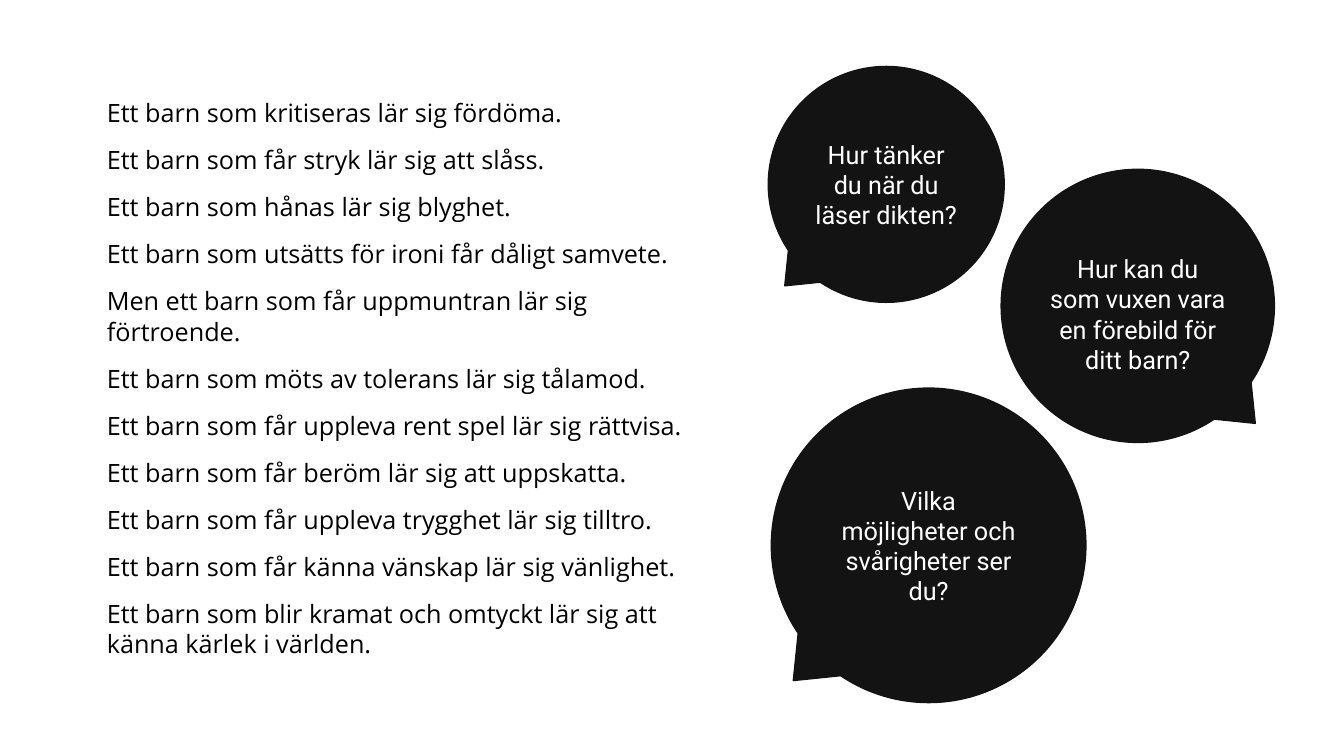
from dataclasses import dataclass

from pptx import Presentation
from pptx.dml.color import RGBColor
from pptx.enum.shapes import MSO_SHAPE
from pptx.enum.text import MSO_ANCHOR, PP_ALIGN
from pptx.util import Pt

PX = 9144  # EMU per px, 100 px to the inch


@dataclass(frozen=True)
class Theme:
    ink: str = "000000"
    bubble: str = "131313"
    paper: str = "FFFFFF"
    poem_font: str = "Open Sans"
    bubble_font: str = "Roboto"
    size: int = 18
    gap: int = 12


THEME = Theme()

POEM = [
    "Ett barn som kritiseras lär sig fördöma.",
    "Ett barn som får stryk lär sig att slåss.",
    "Ett barn som hånas lär sig blyghet.",
    "Ett barn som utsätts för ironi får dåligt samvete.",
    "Men ett barn som får uppmuntran lär sig förtroende.",
    "Ett barn som möts av tolerans lär sig tålamod.",
    "Ett barn som får uppleva rent spel lär sig rättvisa.",
    "Ett barn som får beröm lär sig att uppskatta.",
    "Ett barn som får uppleva trygghet lär sig tilltro.",
    "Ett barn som får känna vänskap lär sig vänlighet.",
    "Ett barn som blir kramat och omtyckt lär sig att känna kärlek i världen.",
]

# question, (left, top, diameter), tail side, insets (left, top, right, bottom)
QUESTIONS = [
    ("Hur tänker du när du läser dikten?",
     (762, 66, 234), -1, (10, 5, 10, 5)),
    ("Hur kan du som vuxen vara en förebild för ditt barn?",
     (993, 168, 271), 1, (8, 24, 8, 8)),
    ("Vilka möjligheter och svårigheter ser du?",
     (765, 385, 312), -1, (24, 24, 24, 24)),
]


def px(*lengths):
    return [round(n * PX) for n in lengths]


def write(tf, lines, font, color, align=PP_ALIGN.LEFT, gap=0, insets=(0, 5, 0, 5)):
    tf.word_wrap = True
    tf.vertical_anchor = MSO_ANCHOR.MIDDLE
    tf.margin_left, tf.margin_top, tf.margin_right, tf.margin_bottom = px(*insets)
    for i, line in enumerate(lines):
        p = tf.add_paragraph() if i else tf.paragraphs[0]
        p.alignment = align
        p.space_after = Pt(gap)
        r = p.add_run()
        r.text = line
        r.font.name = font
        r.font.size = Pt(THEME.size)
        r.font.color.rgb = RGBColor.from_string(color)


def add_poem(s, box):
    sp = s.shapes.add_textbox(*px(*box))
    write(sp.text_frame, POEM, THEME.poem_font, THEME.ink, gap=THEME.gap)


def add_bubble(s, question, box, tail_side, insets):
    left, top, size = box
    sp = s.shapes.add_shape(MSO_SHAPE.OVAL_CALLOUT, *px(left, top, size, size))
    sp.adjustments[0] = 0.43 * tail_side
    sp.adjustments[1] = 0.43
    sp.shadow.inherit = False
    sp.fill.solid()
    sp.fill.fore_color.rgb = RGBColor.from_string(THEME.bubble)
    sp.line.color.rgb = RGBColor.from_string(THEME.bubble)
    sp.line.width = Pt(1)
    write(sp.text_frame, [question], THEME.bubble_font, THEME.paper,
          align=PP_ALIGN.CENTER, insets=insets)


def main():
    prs = Presentation()
    prs.slide_width, prs.slide_height = px(1333, 750)
    s = prs.slides.add_slide(prs.slide_layouts[6])
    add_poem(s, (106, 0, 586, 750))
    for question in QUESTIONS:
        add_bubble(s, *question)
    prs.save("out.pptx")


if __name__ == "__main__":
    main()
